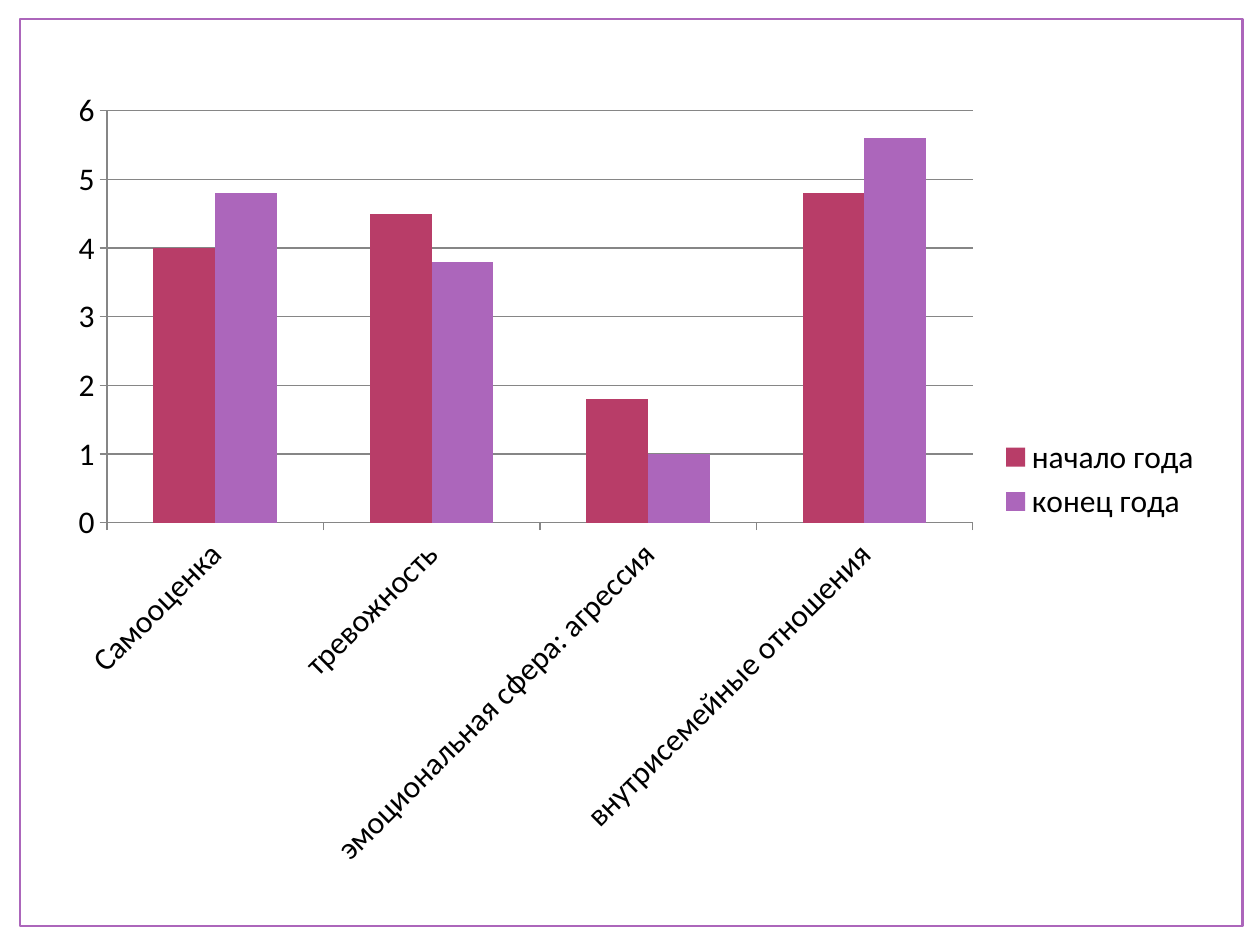
import pptx
import pptx.chart.data
import pptx.dml.color
import pptx.enum.chart
import pptx.enum.shapes
import pptx.oxml
import pptx.oxml.ns
import pptx.util
from pptx.util import Inches, Pt

CATEGORIES = ["Самооценка", "тревожность", "эмоциональная сфера: агрессия",
              "внутрисемейные отношения"]
SERIES = [
    ("начало года", [4, 4.5, 1.8, 4.8], "B83D68"),
    ("конец года", [4.8, 3.8, 1, 5.6], "AC66BB"),
]
FRAME = (0.16, 0.15, 9.7, 7.2)
CHART = (0.43, 0.6, 9.21, 6.41)
PLOT = (0.85, 0.88, 6.87, 3.27)
GREY = "868686"


def color(value):
    return pptx.dml.color.RGBColor.from_string(value)


def place_plot(chart):
    """Fix the inner plot area, as fractions of the chart."""
    left, top, width, height = CHART
    fractions = {
        "x": (PLOT[0] - left) / width,
        "y": (PLOT[1] - top) / height,
        "w": PLOT[2] / width,
        "h": PLOT[3] / height,
    }
    modes = '<c:layoutTarget val="inner"/><c:xMode val="edge"/><c:yMode val="edge"/>'
    sizes = "".join(f'<c:{key} val="{value:.4f}"/>' for key, value in fractions.items())
    plot_area = chart.element.chart.plotArea
    for layout in plot_area.findall(pptx.oxml.ns.qn("c:layout")):
        plot_area.remove(layout)
    plot_area.insert(0, pptx.oxml.parse_xml(
        f'<c:layout {pptx.oxml.ns.nsdecls("c")}><c:manualLayout>{modes}{sizes}'
        '</c:manualLayout></c:layout>'))


def fill_background(chart, fill, opacity):
    chart.element.chart.addnext(pptx.oxml.parse_xml(
        f'<c:spPr {pptx.oxml.ns.nsdecls("c", "a")}><a:solidFill><a:srgbClr val="{fill}">'
        f'<a:alpha val="{opacity * 1000}"/></a:srgbClr></a:solidFill>'
        '<a:ln><a:noFill/></a:ln></c:spPr>'))


def style_line(line, value, width):
    line.color.rgb = color(value)
    line.width = Pt(width)


def add_frame(slide):
    frame = slide.shapes.add_shape(pptx.enum.shapes.MSO_SHAPE.RECTANGLE, *map(Inches, FRAME))
    frame.shadow.inherit = False
    frame.fill.background()
    style_line(frame.line, "AC66BB", 1.5)


def add_results(slide):
    results = pptx.chart.data.CategoryChartData()
    results.categories = CATEGORIES
    for name, values, _ in SERIES:
        results.add_series(name, values)
    chart = slide.shapes.add_chart(
        pptx.enum.chart.XL_CHART_TYPE.COLUMN_CLUSTERED, *map(Inches, CHART), results).chart
    chart.has_title = False
    chart.font.name = "Calibri"
    chart.font.size = Pt(18)
    chart.font.color.rgb = color("000000")
    fill_background(chart, "FFFFFF", 82)
    place_plot(chart)

    chart.has_legend = True
    chart.legend.position = pptx.enum.chart.XL_LEGEND_POSITION.RIGHT
    chart.legend.include_in_layout = False

    bars = chart.plots[0]
    bars.gap_width = 150
    bars.overlap = 0
    bars.vary_by_categories = False
    for series, (_, _, fill) in zip(bars.series, SERIES):
        series.format.fill.solid()
        series.format.fill.fore_color.rgb = color(fill)

    for axis in (chart.category_axis, chart.value_axis):
        axis.major_tick_mark = pptx.enum.chart.XL_TICK_MARK.OUTSIDE
        axis.minor_tick_mark = pptx.enum.chart.XL_TICK_MARK.NONE
        style_line(axis.format.line, GREY, 0.75)
    scale = chart.value_axis
    scale.minimum_scale, scale.maximum_scale, scale.major_unit = 0, 6, 1
    scale.has_major_gridlines = True
    style_line(scale.major_gridlines.format.line, GREY, 0.75)

    labels = chart.category_axis.tick_labels
    labels.font.size = Pt(18)
    body = chart.category_axis._element.find(
        f'{pptx.oxml.ns.qn("c:txPr")}/{pptx.oxml.ns.qn("a:bodyPr")}')
    body.set("rot", str(-45 * 60000))
    body.set("vert", "horz")


def main():
    deck = pptx.Presentation()
    deck.slide_width, deck.slide_height = Inches(10), Inches(7.5)
    slide = deck.slides.add_slide(deck.slide_layouts[6])
    add_frame(slide)
    add_results(slide)
    deck.save("out.pptx")


if __name__ == "__main__":
    main()
